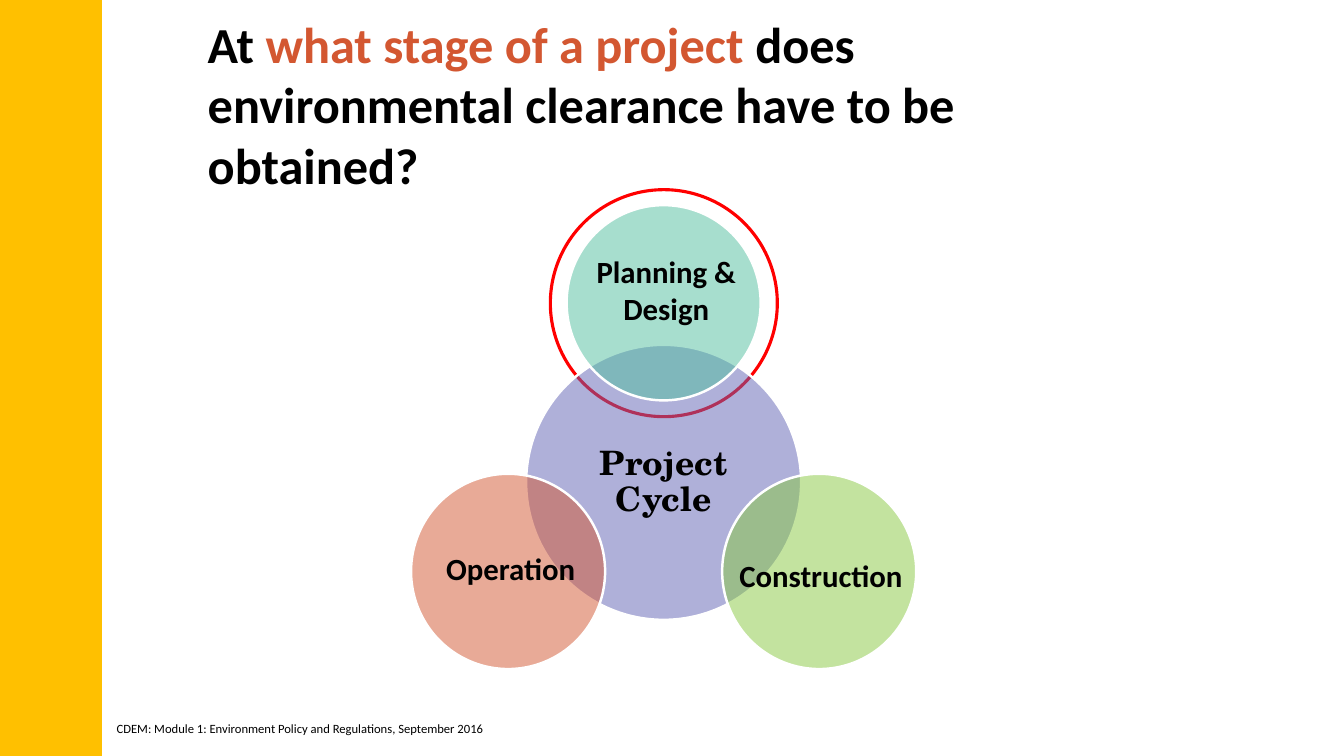
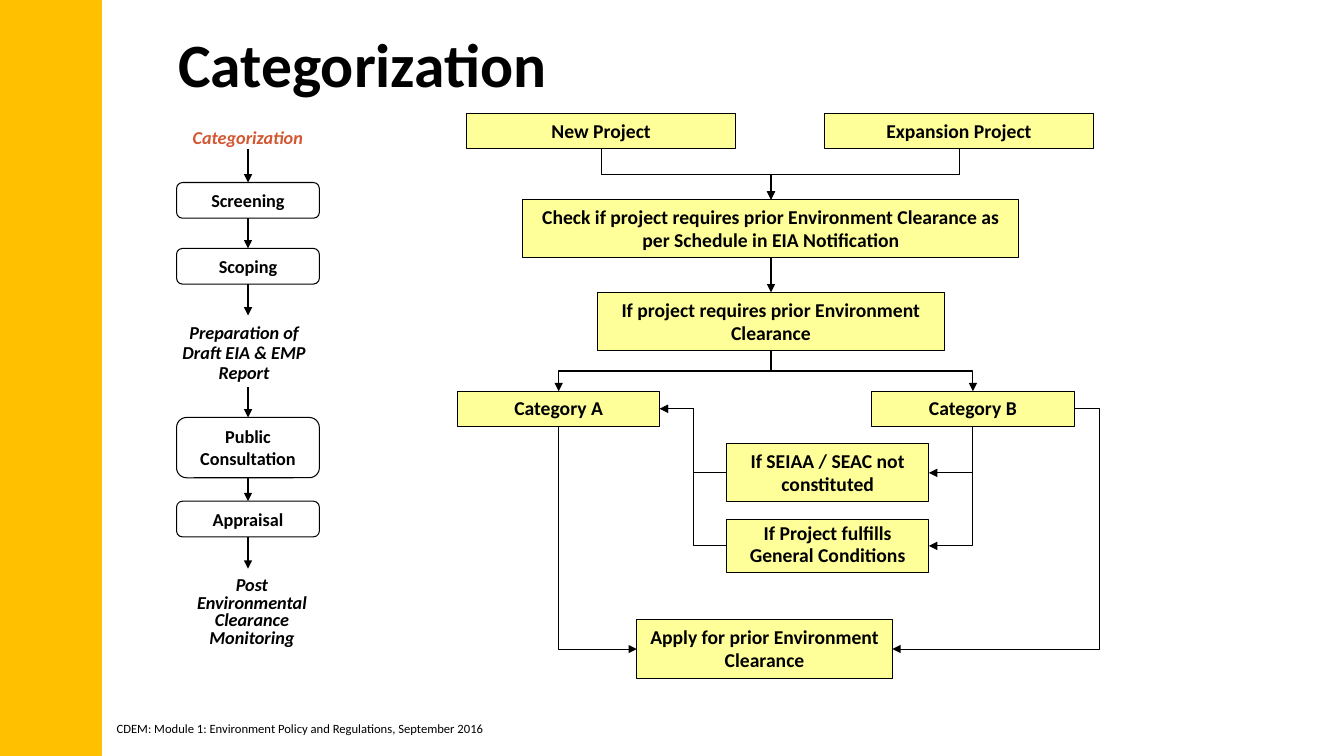
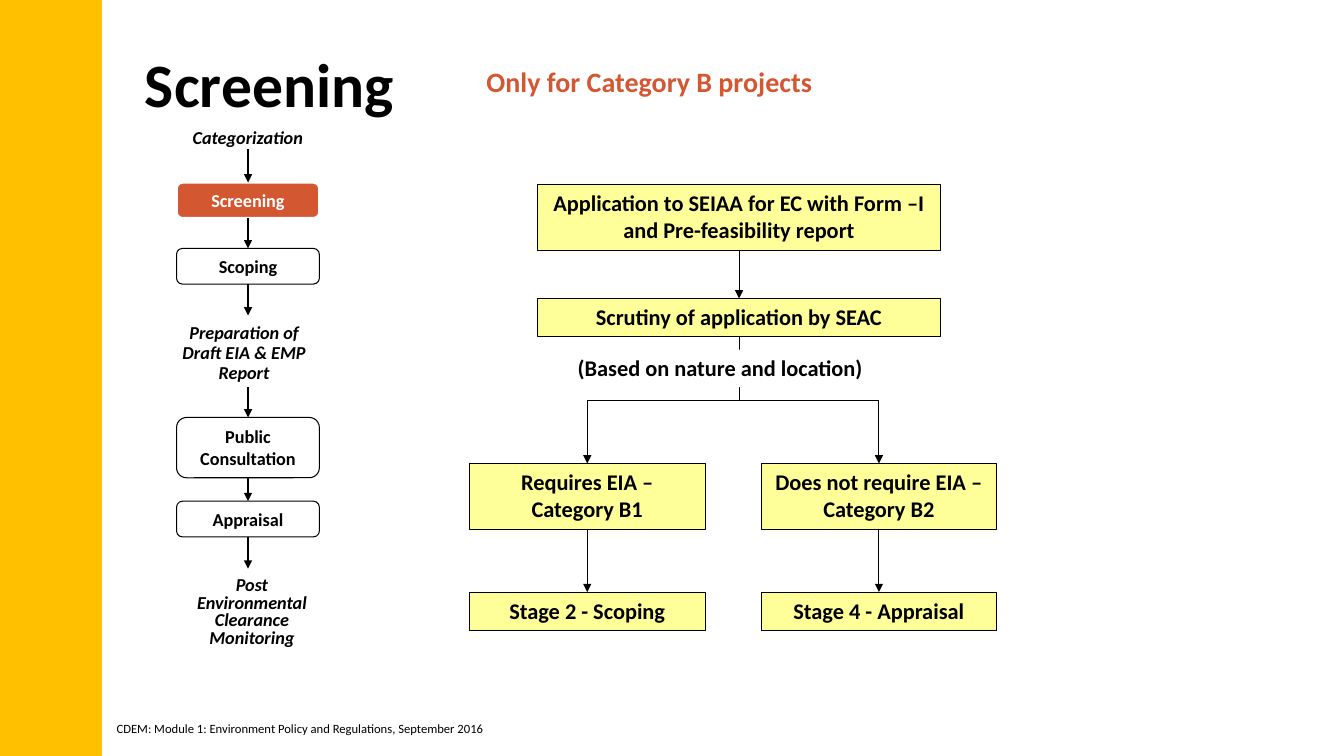
from dataclasses import dataclass

from lxml import etree
from pptx import Presentation
from pptx.dml import color as dml
from pptx.enum import shapes, text
from pptx.oxml import ns
from pptx.util import Cm, Pt

BLACK, WHITE = "000000", "FFFFFF"
GOLD, ACCENT, PALE, RED = "FFC000", "D35731", "FFFF99", "FF0000"
LAVENDER, MINT, GREEN = "6063B4", "51BE9F", "88C841"
FONT, SERIF = "Calibri", "TeX Gyre Schola"
TOP, LEFT, BOTTOM, RIGHT = range(4)
RECT = shapes.MSO_SHAPE.RECTANGLE
ROUND = shapes.MSO_SHAPE.ROUNDED_RECTANGLE
OVAL = shapes.MSO_SHAPE.OVAL
CENTER = text.PP_ALIGN.CENTER


@dataclass(frozen=True)
class Area:
    left: float
    top: float
    width: float
    height: float

    def lengths(self) -> tuple:
        return Cm(self.left), Cm(self.top), Cm(self.width), Cm(self.height)


@dataclass(frozen=True)
class Style:
    size: float
    color: str = BLACK
    bold: bool = True
    italic: bool = False
    font: str = FONT
    align: text.PP_ALIGN = CENTER
    spacing: float = 1.0


@dataclass(frozen=True)
class Node:
    key: str
    label: str
    area: Area
    spacing: float = 1.0


@dataclass(frozen=True)
class Link:
    start: str
    start_side: int
    end: str
    end_side: int
    bend: float = 0.5


@dataclass(frozen=True)
class Step:
    label: str
    area: Area
    framed: bool = True
    spacing: float = 1.0


@dataclass(frozen=True)
class Stage:
    label: str
    circle: Area
    caption: Area
    color: str


def rgb(value: str) -> dml.RGBColor:
    return dml.RGBColor.from_string(value)


def style_paragraph(para, style: Style) -> None:
    para.alignment = style.align
    if style.spacing != 1:
        para.line_spacing = style.spacing
    font = para.font
    font.name, font.size = style.font, Pt(style.size)
    font.bold, font.italic = style.bold, style.italic
    font.color.rgb = rgb(style.color)


def write(box, label: str, style: Style, anchor=text.MSO_ANCHOR.TOP) -> None:
    frame = box.text_frame
    frame.word_wrap = True
    frame.vertical_anchor = anchor
    para = frame.paragraphs[0]
    para.add_run().text = label
    style_paragraph(para, style)


def add_text(page, area: Area, label: str, style: Style):
    box = page.shapes.add_textbox(*area.lengths())
    write(box, label, style)
    return box


def add_box(page, kind, area: Area, fill: str = "", line: str = "",
            weight: float = 0.75, opacity: int = 100):
    box = page.shapes.add_shape(kind, *area.lengths())
    box.shadow.inherit = False
    if fill:
        box.fill.solid()
        box.fill.fore_color.rgb = rgb(fill)
        if opacity < 100:
            tint = box.element.spPr.find(".//" + ns.qn("a:srgbClr"))
            etree.SubElement(tint, ns.qn("a:alpha"), val=str(opacity * 1000))
    else:
        box.fill.background()
    if line:
        box.line.color.rgb = rgb(line)
        box.line.width = Pt(weight)
    else:
        box.line.fill.background()
    return box


def finish_arrow(connector, weight: float) -> None:
    connector.line.color.rgb = rgb(BLACK)
    connector.line.width = Pt(weight)
    properties = connector.element.spPr
    etree.SubElement(properties.find(ns.qn("a:ln")), ns.qn("a:tailEnd"), type="triangle")
    etree.SubElement(properties, ns.qn("a:effectLst"))


def turn_downward(connector) -> None:
    start_x, start_y = connector.begin_x, connector.begin_y
    across, down = connector.end_x - start_x, connector.end_y - start_y
    connector.width, connector.height = down, abs(across)
    connector.left = start_x + (across - down) // 2
    connector.top = start_y + (down - abs(across)) // 2
    connector.rotation = 270 if across > 0 else 90
    frame = connector.element.spPr.find(ns.qn("a:xfrm"))
    frame.set("flipH", "1" if across > 0 else "0")


def add_link(page, link: Link, boxes: dict) -> None:
    start, end = boxes[link.start], boxes[link.end]
    downward = link.start_side == BOTTOM
    offset = start.left + start.width // 2 - end.left - end.width // 2
    straight = downward and link.end_side == TOP and abs(offset) < Cm(0.05)
    kinds = shapes.MSO_CONNECTOR
    connector = page.shapes.add_connector(
        kinds.STRAIGHT if straight else kinds.ELBOW, 0, 0, 0, 0)
    connector.begin_connect(start, link.start_side)
    connector.end_connect(end, link.end_side)
    if not straight:
        geometry = connector.element.spPr.find(ns.qn("a:prstGeom"))
        if downward:
            turn_downward(connector)
            if link.end_side != TOP:
                geometry.set("prst", "bentConnector2")
        if link.bend != 0.5:
            guides = geometry.find(ns.qn("a:avLst"))
            if guides is None:
                guides = etree.SubElement(geometry, ns.qn("a:avLst"))
            etree.SubElement(guides, ns.qn("a:gd"), name="adj1",
                             fmla=f"val {round(link.bend * 100000)}")
    finish_arrow(connector, 0.75)


def add_flow(page, nodes: list[Node], links: list[Link], size: float) -> None:
    boxes = {}
    for node in nodes:
        box = add_box(page, RECT, node.area, PALE, BLACK)
        write(box, node.label, Style(size, spacing=node.spacing))
        boxes[node.key] = box
    for link in links:
        add_link(page, link, boxes)


STEPS = [
    Step("Categorization", Area(4.24, 3.12, 4.01, 0.79), False, 0.8),
    Step("Screening", Area(4.45, 4.6, 3.6, 0.9)),
    Step("Scoping", Area(4.45, 6.26, 3.6, 0.9)),
    Step("Preparation of Draft EIA & EMP Report", Area(4.2, 7.95, 3.9, 1.96), False, 0.9),
    Step("Public Consultation", Area(4.45, 10.52, 3.6, 1.52)),
    Step("Appraisal", Area(4.45, 12.63, 3.6, 0.9)),
    Step("Post Environmental Clearance Monitoring", Area(4.24, 14.33, 4.22, 2.26), False, 0.8),
]
STEP_AXIS = 6.25
STEP_OVERLAP = 0.16


def add_process(page, current: str) -> None:
    boxes = []
    for step in STEPS:
        active = step.label == current
        color, fill, line, weight = BLACK, "", "", 0.75
        if step.framed:
            line = BLACK
        if active and step.framed:
            color, fill, line, weight = WHITE, ACCENT, WHITE, 1.75
        elif active:
            color = ACCENT
        box = add_box(page, ROUND, step.area, fill, line, weight)
        write(box, step.label,
              Style(13, color, italic=not step.framed, spacing=step.spacing))
        boxes.append(box)
    for index in range(len(STEPS) - 1):
        step, following = STEPS[index:index + 2]
        leave = step.area.top + step.area.height - STEP_OVERLAP
        arrow = page.shapes.add_connector(
            shapes.MSO_CONNECTOR.STRAIGHT, Cm(STEP_AXIS), Cm(leave),
            Cm(STEP_AXIS), Cm(following.area.top))
        if step.framed:
            arrow.begin_connect(boxes[index], BOTTOM)
        if following.framed:
            arrow.end_connect(boxes[index + 1], TOP)
        finish_arrow(arrow, 1)


def add_page(deck, area: Area, size: float, spans: list[tuple[str, str]]):
    page = deck.slides.add_slide(deck.slide_layouts[5])
    title = page.shapes.title
    title.left, title.top, title.width, title.height = area.lengths()
    frame = title.text_frame
    frame.auto_size = text.MSO_AUTO_SIZE.NONE
    frame.word_wrap = True
    frame.vertical_anchor = text.MSO_ANCHOR.MIDDLE
    para = frame.paragraphs[0]
    for words, color in spans:
        span = para.add_run()
        span.text = words
        if color != BLACK:
            span.font.color.rgb = rgb(color)
    style_paragraph(para, Style(size, align=text.PP_ALIGN.LEFT))
    return page


def furnish_layout(page) -> None:
    band = add_box(page, RECT, Area(0, 0, 2.57, 19.05), GOLD)
    footer = add_text(page, Area(2.69, 18.03, 9.93, 0.64),
                      "CDEM: Module 1: Environment Policy and Regulations, September 2016",
                      Style(9, bold=False, align=text.PP_ALIGN.LEFT))
    footer.text_frame.word_wrap = False
    for position, item in enumerate((band, footer), start=2):
        page.slide_layout.shapes.element.insert(position, item.element)


def build_cycle(deck) -> None:
    page = add_page(deck, Area(4.98, 0.76, 23.75, 3.71), 36, [
        ("At ", BLACK), ("what stage of a project ", ACCENT),
        ("does environmental clearance have to be obtained?", BLACK)])
    furnish_layout(page)
    add_box(page, OVAL, Area(13.87, 4.78, 5.72, 5.72), line=RED, weight=2.25)
    hub = add_box(page, OVAL, Area(13.26, 8.69, 6.93, 6.93), LAVENDER, WHITE, 1.75, 50)
    write(hub, "Project Cycle", Style(24, font=SERIF, spacing=0.9), text.MSO_ANCHOR.MIDDLE)
    frame = hub.text_frame
    frame.margin_left = frame.margin_right = Cm(0.08)
    frame.margin_top = frame.margin_bottom = Cm(0.08)
    width, height = 4.89, 4.92
    stages = [
        Stage("Planning & Design", Area(14.28, 5.17, width, height),
              Area(14.75, 6.25, 4.08, 2.13), MINT),
        Stage("Construction", Area(18.2, 11.94, width, height),
              Area(17.78, 13.9, 5.82, 1.19), GREEN),
        Stage("Operation", Area(10.36, 11.94, width, height),
              Area(9.96, 13.74, 5.82, 1.19), ACCENT),
    ]
    for stage in stages:
        add_box(page, OVAL, stage.circle, stage.color, WHITE, 1.75, 50)
    for stage in stages:
        add_text(page, stage.caption, stage.label, Style(22))


def build_categorization(deck) -> None:
    page = add_page(deck, Area(4.24, 0.05, 23.47, 3.05), 44, [("Categorization", BLACK)])
    low, high = 0.88, 1.47
    nodes = [
        Node("new", "New Project", Area(11.76, 2.87, 6.78, low)),
        Node("expansion", "Expansion Project", Area(20.78, 2.87, 6.78, low)),
        Node("check", "Check if project requires prior Environment Clearance as per "
             "Schedule in EIA Notification", Area(13.18, 5.03, 12.5, high)),
        Node("required", "If project requires prior Environment Clearance",
             Area(15.06, 7.37, 8.74, high)),
        Node("a", "Category A", Area(11.53, 9.86, 5.1, low)),
        Node("b", "Category B", Area(21.97, 9.86, 5.1, low)),
        Node("general", "If Project fulfills General Conditions",
             Area(18.31, 13.08, 5.1, 1.35), 0.9),
        Node("seiaa", "If SEIAA / SEAC not constituted", Area(18.31, 11.18, 5.1, high)),
        Node("apply", "Apply for prior Environment Clearance",
             Area(16.05, 15.62, 6.44, high)),
    ]
    links = [
        Link("new", BOTTOM, "check", TOP),
        Link("expansion", BOTTOM, "check", TOP),
        Link("check", BOTTOM, "required", TOP),
        Link("required", BOTTOM, "a", TOP),
        Link("required", BOTTOM, "b", TOP),
        Link("a", BOTTOM, "apply", LEFT),
        Link("b", RIGHT, "apply", RIGHT, -0.14),
        Link("b", BOTTOM, "seiaa", RIGHT),
        Link("b", BOTTOM, "general", RIGHT),
        Link("seiaa", LEFT, "a", RIGHT),
        Link("general", LEFT, "a", RIGHT),
    ]
    add_flow(page, nodes, links, 14)
    add_process(page, "Categorization")


def build_screening(deck) -> None:
    page = add_page(deck, Area(3.4, 0.56, 24.33, 3.05), 44, [("Screening", BLACK)])
    add_text(page, Area(12.01, 1.5, 14.55, 1.12), "Only for Category B projects",
             Style(20, ACCENT, align=text.PP_ALIGN.LEFT))
    low, high = 0.97, 1.67
    nodes = [
        Node("application", "Application to SEIAA for EC with Form –I and "
             "Pre-feasibility report", Area(13.54, 4.65, 10.17, high)),
        Node("scrutiny", "Scrutiny of application by SEAC", Area(13.54, 7.52, 10.17, low)),
    ]
    links = [Link("application", BOTTOM, "scrutiny", TOP)]
    branches = [
        (11.83, "Requires EIA – Category B1", "Stage 2 - Scoping"),
        (19.18, "Does not require EIA – Category B2", "Stage 4 - Appraisal"),
    ]
    for left, outcome, stage in branches:
        nodes += [Node(outcome, outcome, Area(left, 11.68, 5.94, high)),
                  Node(stage, stage, Area(left, 14.92, 5.94, low))]
        links += [Link("scrutiny", BOTTOM, outcome, TOP),
                  Link(outcome, BOTTOM, stage, TOP)]
    add_flow(page, nodes, links, 16)
    basis = add_box(page, RECT, Area(12.93, 8.81, 10.44, 0.95), WHITE)
    write(basis, "(Based on nature and location)", Style(16))
    add_process(page, "Screening")


def main() -> None:
    deck = Presentation()
    deck.slide_width, deck.slide_height = Cm(33.87), Cm(19.05)
    build_cycle(deck)
    build_categorization(deck)
    build_screening(deck)
    deck.save("out.pptx")


if __name__ == "__main__":
    main()
